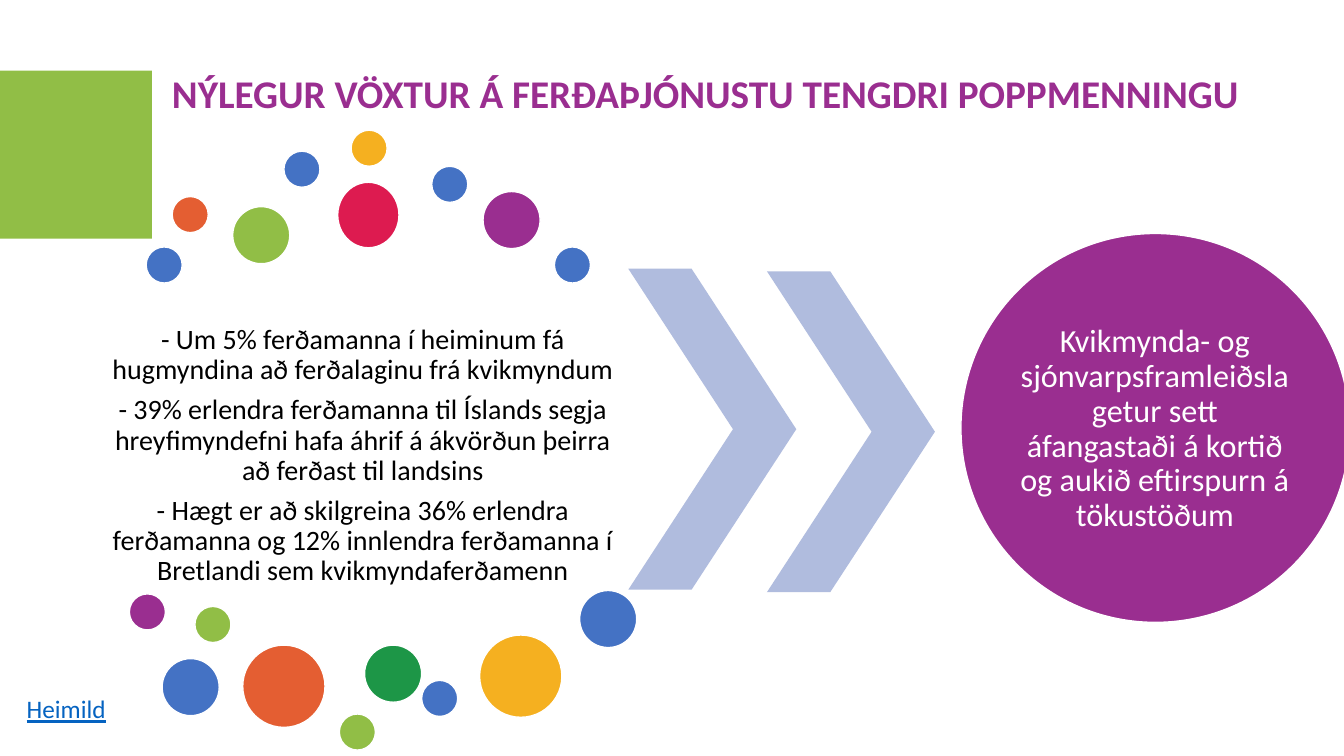
"""Build a slide on travel inspired by pop culture."""
from dataclasses import dataclass, field

from pptx import Presentation
from pptx.dml.color import RGBColor
from pptx.enum.shapes import MSO_SHAPE
from pptx.enum.text import MSO_ANCHOR, PP_ALIGN
from pptx.util import Emu, Inches, Pt

RECT, OVAL, CHEVRON = MSO_SHAPE.RECTANGLE, MSO_SHAPE.OVAL, MSO_SHAPE.CHEVRON
TOP, MIDDLE = MSO_ANCHOR.TOP, MSO_ANCHOR.MIDDLE
LEFT, CENTER = PP_ALIGN.LEFT, PP_ALIGN.CENTER

WHITE = RGBColor(0xFF, 0xFF, 0xFF)
BLACK = RGBColor(0x00, 0x00, 0x00)
BLUE = RGBColor(0x44, 0x72, 0xC4)
PALE = RGBColor(0xB0, 0xBC, 0xDE)
LINK = RGBColor(0x05, 0x63, 0xC1)
LIME = RGBColor(0x91, 0xBE, 0x46)
GREEN = RGBColor(0x1D, 0x96, 0x47)
ORANGE = RGBColor(0xE4, 0x5E, 0x32)
YELLOW = RGBColor(0xF5, 0xB0, 0x20)
RED = RGBColor(0xDD, 0x1B, 0x50)
PURPLE = RGBColor(0x9A, 0x2E, 0x90)

WIDTH, HEIGHT = Inches(13.333), Inches(7.5)
COLS, ROWS = 160, 90
SMALL, MEDIUM, LARGE = 4.3, 6.8, 9.8
FONT = "Calibri"


@dataclass(frozen=True)
class Box:
    """An area in columns and rows of the grid."""
    col: float
    row: float
    wide: float
    high: float

    def place(self) -> tuple[Emu, Emu, Emu, Emu]:
        """Return left, top, width and height."""
        across, down = WIDTH / COLS, HEIGHT / ROWS
        return (Emu(round(self.col * across)), Emu(round(self.row * down)),
                Emu(round(self.wide * across)), Emu(round(self.high * down)))


@dataclass(frozen=True)
class Figure:
    """A filled preset shape."""
    kind: MSO_SHAPE
    box: Box
    fill: RGBColor
    edge: bool = False
    bend: float | None = None


@dataclass(frozen=True)
class Label:
    """A text box with one paragraph per line."""
    box: Box
    lines: list[str]
    font: dict
    layout: dict = field(default_factory=dict)
    anchor: MSO_ANCHOR = TOP
    inset: tuple[float, float] = (0.1, 0.05)


def dot(col: float, row: float, size: float, fill: RGBColor) -> Figure:
    """Describe a round dot with a white edge."""
    return Figure(OVAL, Box(col, row, size, size), fill, edge=True)


def arrow(col: float, row: float) -> Figure:
    """Describe one of the pale chevrons."""
    return Figure(CHEVRON, Box(col, row, 20, 38.2), PALE, bend=0.623)


FIGURES = [
    Figure(RECT, Box(-0.6, 8.4, 18.7, 20), LIME),
    dot(17.4, 29.4, SMALL, BLUE),
    dot(20.5, 23.4, SMALL, ORANGE),
    dot(27.7, 24.6, MEDIUM, LIME),
    dot(33.8, 18, SMALL, BLUE),
    dot(41.8, 15.5, SMALL, YELLOW),
    dot(51.4, 19.8, SMALL, BLUE),
    dot(57.5, 22.8, MEDIUM, PURPLE),
    dot(66, 29.4, SMALL, BLUE),
    dot(23.2, 72.2, SMALL, LIME),
    Figure(OVAL, Box(40.2, 21.7, 7.3, 7.8), RED, edge=True),
    dot(15.4, 70.7, SMALL, PURPLE),
    dot(19.3, 78.4, MEDIUM, BLUE),
    dot(28.9, 76.8, LARGE, ORANGE),
    dot(40.4, 85, SMALL, LIME),
    dot(43.4, 76.8, MEDIUM, GREEN),
    dot(50.2, 81, SMALL, BLUE),
    dot(57.1, 75.6, LARGE, YELLOW),
    dot(69, 70.3, MEDIUM, BLUE),
    arrow(74.8, 32),
    arrow(91.3, 32.3),
    dot(114.4, 27.8, 46.3, PURPLE),
]

LABELS = [
    Label(Box(11.4, 33.2, 63.6, 42.2), [
        "- Um 5% ferðamanna í heiminum fá hugmyndina að ferðalaginu frá kvikmyndum",
        "- 39% erlendra ferðamanna til Íslands segja hreyfimyndefni hafa áhrif á "
        "ákvörðun þeirra að ferðast til landsins",
        "- Hægt er að skilgreina 36% erlendra ferðamanna og 12% innlendra "
        "ferðamanna í Bretlandi sem kvikmyndaferðamenn",
    ], {"size": Pt(20), "color": BLACK},
        {"alignment": CENTER, "line_spacing": 0.9, "space_after": Pt(7)},
        MIDDLE, (0.03, 0.03)),
    Label(Box(121.1, 34.7, 32.8, 32.8), [
        "Kvikmynda- og sjónvarpsframleiðsla getur sett áfangastaði á kortið "
        "og aukið eftirspurn á tökustöðum",
    ], {"size": Pt(23), "color": WHITE},
        {"alignment": CENTER, "line_spacing": 0.9, "space_after": Pt(8)},
        MIDDLE, (0, 0)),
    Label(Box(19.3, 8.3, 130, 9.1),
          ["NÝLEGUR VÖXTUR Á FERÐAÞJÓNUSTU TENGDRI POPPMENNINGU"],
          {"size": Pt(28), "color": PURPLE, "bold": True},
          {"alignment": LEFT, "line_spacing": 0.9}),
    Label(Box(2, 82, 12.8, 4.8), ["Heimild"],
          {"size": Pt(18), "color": LINK, "underline": True}),
]


def draw(shapes, item: Figure) -> None:
    """Add a figure to the slide."""
    shape = shapes.add_shape(item.kind, *item.box.place())
    shape.shadow.inherit = False
    shape.fill.solid()
    shape.fill.fore_color.rgb = item.fill
    if item.edge:
        shape.line.color.rgb = WHITE
        shape.line.width = Pt(1)
    else:
        shape.line.fill.background()
    if item.bend is not None:
        shape.adjustments[0] = item.bend


def write(shapes, item: Label) -> None:
    """Add a label to the slide."""
    frame = shapes.add_textbox(*item.box.place()).text_frame
    side, end = map(Inches, item.inset)
    form = {"word_wrap": True, "vertical_anchor": item.anchor,
            "margin_left": side, "margin_right": side,
            "margin_top": end, "margin_bottom": end}
    for name, value in form.items():
        setattr(frame, name, value)
    frame.text = "\n".join(item.lines)
    for para in frame.paragraphs:
        for name, value in item.layout.items():
            setattr(para, name, value)
        for run in para.runs:
            run.font.name = FONT
            for name, value in item.font.items():
                if name == "color":
                    run.font.color.rgb = value
                else:
                    setattr(run.font, name, value)


def main() -> None:
    """Build and save the slide."""
    deck = Presentation()
    deck.slide_width, deck.slide_height = WIDTH, HEIGHT
    shapes = deck.slides.add_slide(deck.slide_layouts[6]).shapes
    for item in FIGURES:
        draw(shapes, item)
    for item in LABELS:
        write(shapes, item)
    deck.save("out.pptx")


if __name__ == "__main__":
    main()
